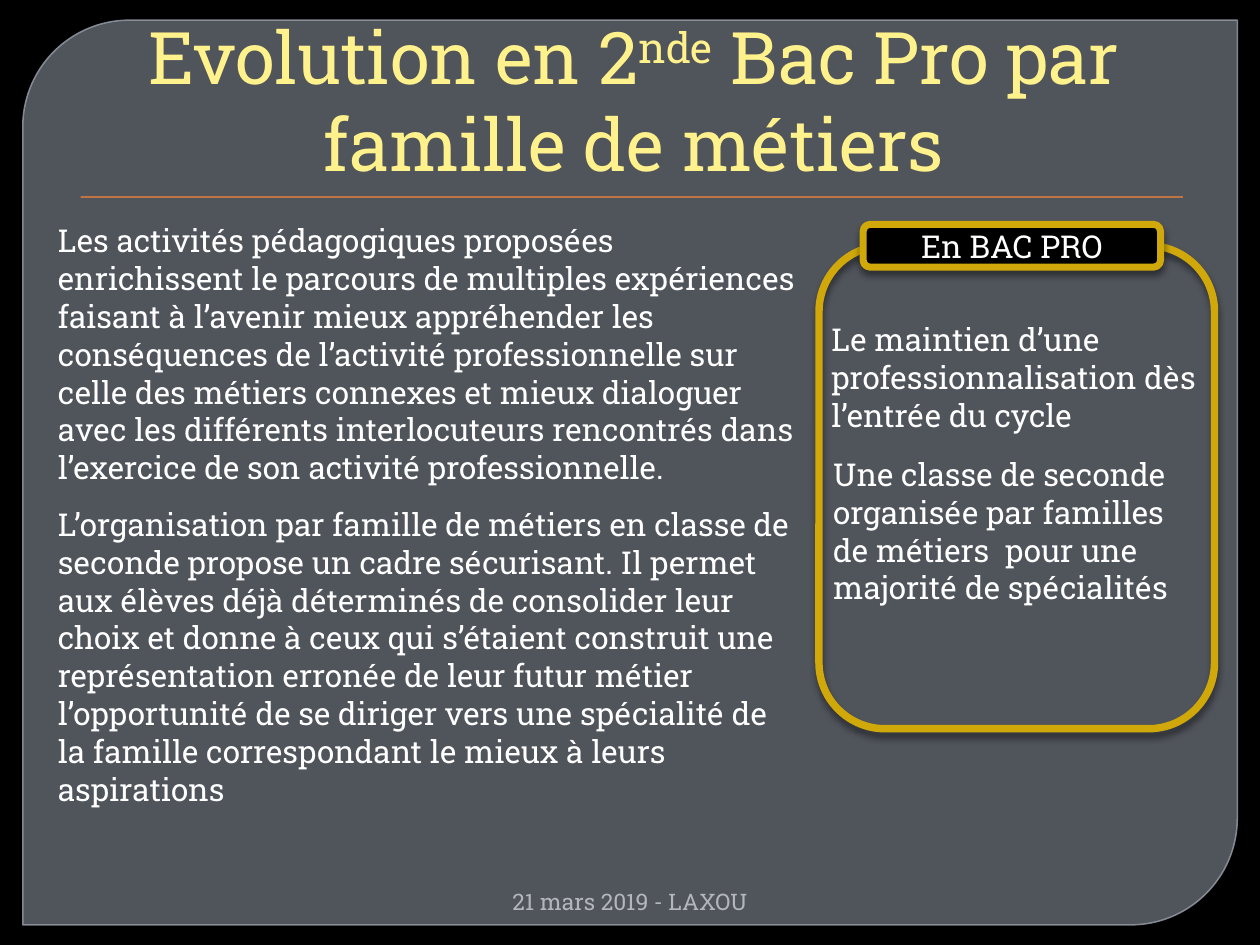
from lxml import etree
from pptx import Presentation
from pptx.dml.color import RGBColor
from pptx.enum.shapes import MSO_SHAPE as Shape
from pptx.enum.text import MSO_ANCHOR as Anchor, PP_ALIGN as Align
from pptx.oxml.ns import qn
from pptx.util import Pt

COLORS = {
    "background": "000000",
    "panel": "7C828D",
    "panel_line": "9096A1",
    "rule": "FE8637",
    "title": "FFF18B",
    "text": "FFFFFF",
    "footer": "B3B6BC",
    "gold": "D0A80A",
}


def rgb(name):
    return RGBColor.from_string(COLORS[name])


def set_alpha(parent, percent):
    """Make the solid fill held by a spPr or ln element partly transparent."""
    clr = parent.find(qn("a:solidFill")).find(qn("a:srgbClr"))
    etree.SubElement(clr, qn("a:alpha"), val=str(percent * 1000))


class SlideBuilder:
    font = "Roboto Slab"

    def __init__(self, prs):
        self.s = prs.slides.add_slide(prs.slide_layouts[6])
        fill = self.s.background.fill
        fill.solid()
        fill.fore_color.rgb = rgb("background")

    def shape(self, kind, box, fill=None, line=None, width=1):
        sp = self.s.shapes.add_shape(kind, *map(Pt, box))
        sp.shadow.inherit = False
        if fill:
            sp.fill.solid()
            sp.fill.fore_color.rgb = rgb(fill)
        else:
            sp.fill.background()
        if line:
            sp.line.color.rgb = rgb(line)
            sp.line.width = Pt(width)
        else:
            sp.line.fill.background()
        return sp

    def drop_shadow(self, sp, blur, distance, alpha):
        effects = sp._element.spPr.find(qn("a:effectLst"))
        shadow = etree.SubElement(
            effects, qn("a:outerShdw"), blurRad=str(Pt(blur)),
            dist=str(Pt(distance)), dir="5400000", rotWithShape="0")
        clr = etree.SubElement(shadow, qn("a:srgbClr"), val="000000")
        etree.SubElement(clr, qn("a:alpha"), val=str(alpha * 1000))

    def fill_text(self, tf, parts, size=18, color="text", align=Align.LEFT,
                  anchor=Anchor.TOP):
        """Fill a frame with one paragraph; every second part is superscript."""
        tf.word_wrap = True
        tf.vertical_anchor = anchor
        p = tf.paragraphs[0]
        p.alignment = align
        for i, part in enumerate(parts):
            r = p.add_run()
            r.text = part
            r.font.name = self.font
            r.font.size = Pt(size)
            r.font.color.rgb = rgb(color)
            if i % 2:
                r._r.get_or_add_rPr().set("baseline", "30000")
        return p

    def text(self, box, *parts, **style):
        tb = self.s.shapes.add_textbox(*map(Pt, box))
        return self.fill_text(tb.text_frame, parts, **style)


def main():
    prs = Presentation()
    prs.slide_width, prs.slide_height = Pt(720), Pt(540)
    b = SlideBuilder(prs)

    panel = b.shape(Shape.ROUND_2_DIAG_RECTANGLE, (13, 11.5, 694, 517),
                    "panel", "panel_line", 0.87)
    panel.adjustments[0], panel.adjustments[1] = 0.118, 0
    panel_props = panel._element.spPr
    set_alpha(panel_props, 65)
    set_alpha(panel_props.find(qn("a:ln")), 88)
    rule = b.shape(Shape.RECTANGLE, (46, 112.2, 630, 0.7), "rule")
    b.drop_shadow(rule, 1, 1, 75)

    title = b.text((36, 20, 648, 90), "Evolution en 2", "nde",
                   " Bac Pro par famille de métiers", size=41.4, color="title",
                   align=Align.CENTER, anchor=Anchor.BOTTOM)
    title._p.get_or_add_pPr().set("marL", str(Pt(4.3)))
    b.text((102, 504, 332, 21.6), "21 mars 2019 - LAXOU", size=13,
           color="footer", align=Align.RIGHT)

    frame = b.shape(Shape.ROUNDED_RECTANGLE, (468, 140.4, 226, 276), None, "gold", 4.25)
    label = b.shape(Shape.ROUNDED_RECTANGLE, (493.2, 128.2, 170, 24.5),
                    "background", "gold", 4)
    for sp in (frame, label):
        b.drop_shadow(sp, 4, 3, 43)
    b.fill_text(label.text_frame, ["En BAC PRO"], align=Align.CENTER,
                anchor=Anchor.MIDDLE)

    b.text((468, 179.5, 226, 72.7),
           "Le maintien d’une professionnalisation dès l’entrée du cycle")
    b.text((469, 256.5, 224.6, 94.3),
           "Une classe de seconde organisée par familles de métiers  pour une "
           "majorité de spécialités")
    b.text((26, 123, 435.6, 160),
           "Les activités pédagogiques proposées enrichissent le parcours de "
           "multiples expériences faisant à l’avenir mieux appréhender les "
           "conséquences de l’activité professionnelle sur celle des métiers "
           "connexes et mieux dialoguer avec les différents interlocuteurs "
           "rencontrés dans l’exercice de son activité professionnelle.")
    b.text((26, 285, 435.6, 181.4),
           "L’organisation par famille de métiers en classe de seconde propose "
           "un cadre sécurisant. Il permet aux élèves déjà déterminés de "
           "consolider leur choix et donne à ceux qui s’étaient construit une "
           "représentation erronée de leur futur métier l’opportunité de se "
           "diriger vers une spécialité de la famille correspondant le mieux à "
           "leurs aspirations")

    prs.save("out.pptx")


if __name__ == "__main__":
    main()
